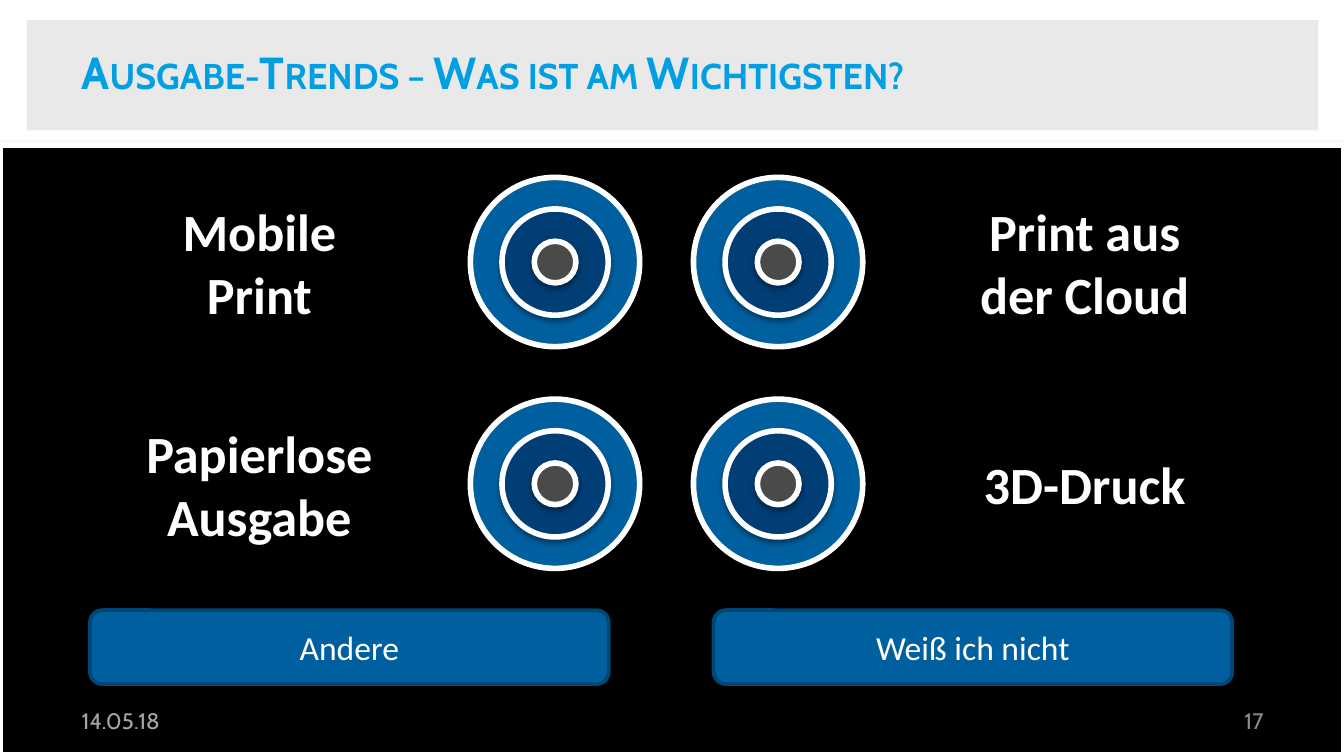
import pptx
import pptx.dml.color
import pptx.enum.shapes
import pptx.enum.text
import pptx.oxml
import pptx.oxml.ns
import pptx.util

Inches = pptx.util.Inches
Pt = pptx.util.Pt
KIND = pptx.enum.shapes.MSO_SHAPE
ALIGN = pptx.enum.text.PP_ALIGN

WHITE, BLACK, BLUE = "FFFFFF", "000000", "005F9F"

TITLE = "Ausgabe-Trends – Was ist am Wichtigsten?"
DATE, PAGE = "14.05.18", "17"
TRENDS = [
    ["Mobile\nPrint", "Print aus\nder Cloud"],
    ["Papierlose\nAusgabe", "3D-Druck"],
]
OTHER_ANSWERS = ["Andere", "Weiß ich nicht"]

RINGS = [(1.26, BLUE), (0.79, "003E75"), (0.31, "4A4A49")]  # diameter, fill
ROW_CENTERS = [1.95, 3.6]
TARGET_CENTERS = [4.13, 5.79]
LABEL_LEFTS, LABEL_SIZE = [0.75, 6.89], (2.36, 1.1)
BUTTON_LEFTS, BUTTON_TOP, BUTTON_SIZE = [0.67, 5.31], 4.54, (3.86, 0.55)

SHADOW = (
    '<a:outerShdw %s blurRad="%d" dist="%d" dir="5400000" rotWithShape="0">'
    '<a:srgbClr val="000000"><a:alpha val="38000"/></a:srgbClr></a:outerShdw>'
    % (pptx.oxml.ns.nsdecls("a"), Pt(3.1), Pt(1.6))
)


def rgb(value):
    return pptx.dml.color.RGBColor.from_string(value)


def add_shape(kind, box, fill, line=None, line_width=2, shadow=False):
    shape = slide.shapes.add_shape(kind, *map(Inches, box))
    shape.shadow.inherit = False
    shape.fill.solid()
    shape.fill.fore_color.rgb = rgb(fill)
    if line:
        shape.line.color.rgb = rgb(line)
        shape.line.width = Pt(line_width)
    else:
        shape.line.fill.background()
    if shadow:
        effects = shape._element.spPr.find(pptx.oxml.ns.qn("a:effectLst"))
        effects.append(pptx.oxml.parse_xml(SHADOW))
    return shape


def write(shape, text, size, color, font="Calibri", bold=False,
          align=ALIGN.CENTER, small_caps=False):
    frame = shape.text_frame
    frame.word_wrap = True
    frame.vertical_anchor = pptx.enum.text.MSO_ANCHOR.MIDDLE
    paragraph = frame.paragraphs[0]
    paragraph.alignment = align
    for number, words in enumerate(text.split("\n")):
        if number:
            paragraph.add_line_break()
        run = paragraph.add_run()
        run.text = words
        run.font.name = font
        run.font.size = Pt(size)
        run.font.bold = bold
        run.font.color.rgb = rgb(color)
        if small_caps:
            run.font._element.set("cap", "small")


def add_text(box, *args, **style):
    write(slide.shapes.add_textbox(*map(Inches, box)), *args, font="Cabin", **style)


def add_target(center_x, center_y):
    for diameter, fill in RINGS:
        box = (center_x - diameter / 2, center_y - diameter / 2, diameter, diameter)
        add_shape(KIND.OVAL, box, fill, WHITE, 3, shadow=True)


presentation = pptx.Presentation()
presentation.slide_width = Inches(10)
presentation.slide_height = presentation.slide_width * 9 // 16
slide = presentation.slides.add_slide(presentation.slide_layouts[6])

add_shape(KIND.RECTANGLE, (0.2, 0.15, 9.61, 0.82), "E9E9EA")
panel = add_shape(KIND.ROUNDED_RECTANGLE, (0, 1.08, 10, 4.54), BLACK, WHITE, 3, shadow=True)
panel.adjustments[0] = 0
add_text((0.51, 0.21, 6.85, 0.65), TITLE, 24, "009EE2",
         bold=True, align=ALIGN.LEFT, small_caps=True)
add_text((7.17, 5.21, 2.33, 0.3), PAGE, 12, "8C8C8C", align=ALIGN.RIGHT)
add_text((0.51, 5.21, 2.2, 0.3), DATE, 12, "A6A6A6", align=ALIGN.LEFT)

for center_y, trends in zip(ROW_CENTERS, TRENDS):
    for center_x, left, trend in zip(TARGET_CENTERS, LABEL_LEFTS, trends):
        add_target(center_x, center_y)
        label_box = (left, center_y - LABEL_SIZE[1] / 2, *LABEL_SIZE)
        label = add_shape(KIND.RECTANGLE, label_box, BLACK, BLACK)
        write(label, trend, 28, WHITE, bold=True)

for left, answer in zip(BUTTON_LEFTS, OTHER_ANSWERS):
    button = add_shape(KIND.ROUNDED_RECTANGLE, (left, BUTTON_TOP, *BUTTON_SIZE), BLUE, "004676")
    write(button, answer, 18, WHITE)

presentation.save("out.pptx")
